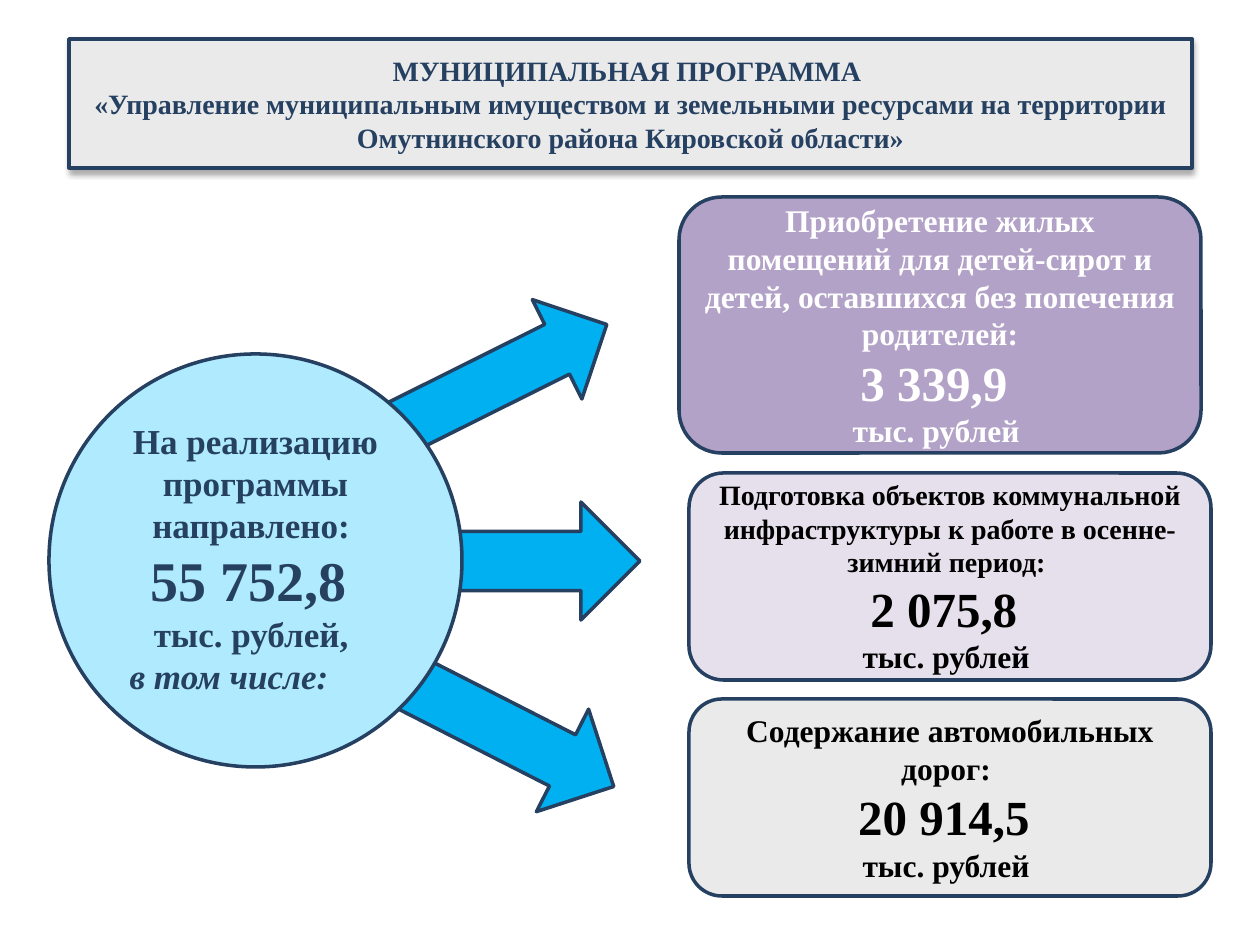
from lxml import etree
from pptx import Presentation
from pptx.dml.color import RGBColor
from pptx.enum.shapes import MSO_SHAPE
from pptx.enum.text import MSO_ANCHOR, MSO_AUTO_SIZE, PP_ALIGN
from pptx.oxml import parse_xml
from pptx.oxml.ns import nsdecls
from pptx.util import Pt

ARROW = MSO_SHAPE.RIGHT_ARROW
ELLIPSE = MSO_SHAPE.OVAL
ROUNDED = MSO_SHAPE.ROUNDED_RECTANGLE
CENTER = PP_ALIGN.CENTER
TOP = MSO_ANCHOR.TOP
MIDDLE = MSO_ANCHOR.MIDDLE
NO_FIT = MSO_AUTO_SIZE.NONE

EMU_PER_PX = 914400 / 126
FONT = "Times New Roman"
NAVY = "254061"
SKY = "00B0F0"
PALE_BLUE = "AFEAFF"
GRAY = "EAEAEA"
PURPLE = "B3A2C7"
LAVENDER = "E6E0EC"
WHITE = "FFFFFF"
BLACK = "000000"


def px(value):
    return round(value * EMU_PER_PX)


def color(value):
    return RGBColor.from_string(value)


def write(para, text, size=18, ink=BLACK, italic=False, right_margin=0):
    para.alignment = CENTER
    if right_margin:
        para._p.get_or_add_pPr().set("marR", str(px(right_margin)))
    span = para.add_run()
    span.text = text
    span.font.name = FONT
    span.font.size = Pt(size)
    span.font.bold = True
    span.font.italic = italic
    span.font.color.rgb = color(ink)


class SlideBuilder:
    def __init__(self, deck):
        self.page = deck.slides.add_slide(deck.slide_layouts[5])

    def paint(self, shape, fill):
        shape.fill.solid()
        shape.fill.fore_color.rgb = color(fill)
        shape.line.color.rgb = color(NAVY)
        shape.line.width = Pt(2)

    def fill_text(self, shape, lines, ink, anchor=MIDDLE):
        frame = shape.text_frame
        frame.word_wrap = True
        frame.auto_size = NO_FIT
        frame.vertical_anchor = anchor
        for index, (text, style) in enumerate(lines):
            para = frame.add_paragraph() if index else frame.paragraphs[0]
            write(para, text, ink=ink, **style)

    def title(self, bounds, lines):
        title = self.page.shapes.title
        title.left, title.top, title.width, title.height = map(px, bounds)
        properties = title._element.spPr
        properties.append(parse_xml(
            f'<a:prstGeom {nsdecls("a")} prst="roundRect"><a:avLst/></a:prstGeom>'))
        self.paint(title, GRAY)
        effects = parse_xml(
            f'<a:effectLst {nsdecls("a")}>'
            f'<a:outerShdw blurRad="{Pt(3.5)}" dist="{Pt(2.2)}" dir="5400000" rotWithShape="0">'
            '<a:srgbClr val="000000"><a:alpha val="32000"/></a:srgbClr>'
            '</a:outerShdw></a:effectLst>')
        etree.SubElement(properties, effects.tag).extend(list(effects))
        self.fill_text(title, lines, NAVY)

    def shape(self, kind, bounds, fill, rotation=0):
        shape = self.page.shapes.add_shape(kind, *map(px, bounds))
        shape.shadow.inherit = False
        shape.rotation = rotation
        self.paint(shape, fill)
        return shape

    def card(self, bounds, fill, ink, lines):
        self.fill_text(self.shape(ROUNDED, bounds, fill), lines, ink)

    def label(self, bounds, lines):
        box = self.page.shapes.add_textbox(*map(px, bounds))
        self.fill_text(box, lines, NAVY, TOP)


def main():
    deck = Presentation()
    deck.slide_width, deck.slide_height = px(1260), px(945)
    slide = SlideBuilder(deck)

    slide.title((69, 39, 1123, 129), [
        ("МУНИЦИПАЛЬНАЯ ПРОГРАММА ", {"size": 16}),
        ("«Управление муниципальным имуществом и земельными ресурсами "
         "на территории Омутнинского района Кировской области»", {"size": 16}),
    ])

    arrows = [
        ((297, 653, 335, 115), 27),
        ((364, 502, 276, 118), 0),
        ((314, 338, 309, 111), 333.5),
    ]
    for bounds, rotation in arrows:
        slide.shape(ARROW, bounds, SKY, rotation)

    slide.shape(ELLIPSE, (49, 354, 413, 413), PALE_BLUE)
    slide.label((108, 413, 295, 292), [
        ("На реализацию программы направлено: ", {"size": 20}),
        ("55 752,8 ", {"size": 32}),
        ("тыс. рублей, ", {"size": 20}),
        ("в том числе:", {"size": 20, "italic": True, "right_margin": 53}),
    ])

    cards = [
        ((679, 197, 522, 256), PURPLE, WHITE, 18, "3 339,9 ",
         "Приобретение жилых помещений для детей-сирот и детей, "
         "оставшихся без попечения родителей:"),
        ((689, 473, 522, 207), LAVENDER, BLACK, 16, "2 075,8 ",
         "Подготовка объектов коммунальной инфраструктуры "
         "к работе в осенне-зимний период: "),
        ((689, 699, 522, 197), GRAY, BLACK, 18, "20 914,5 ",
         "Содержание автомобильных дорог: "),
    ]
    for bounds, fill, ink, size, amount, purpose in cards:
        slide.card(bounds, fill, ink, [
            (purpose, {"size": size}),
            (amount, {"size": 28}),
            ("тыс. рублей ", {"size": 18}),
        ])

    deck.save("out.pptx")


if __name__ == "__main__":
    main()
